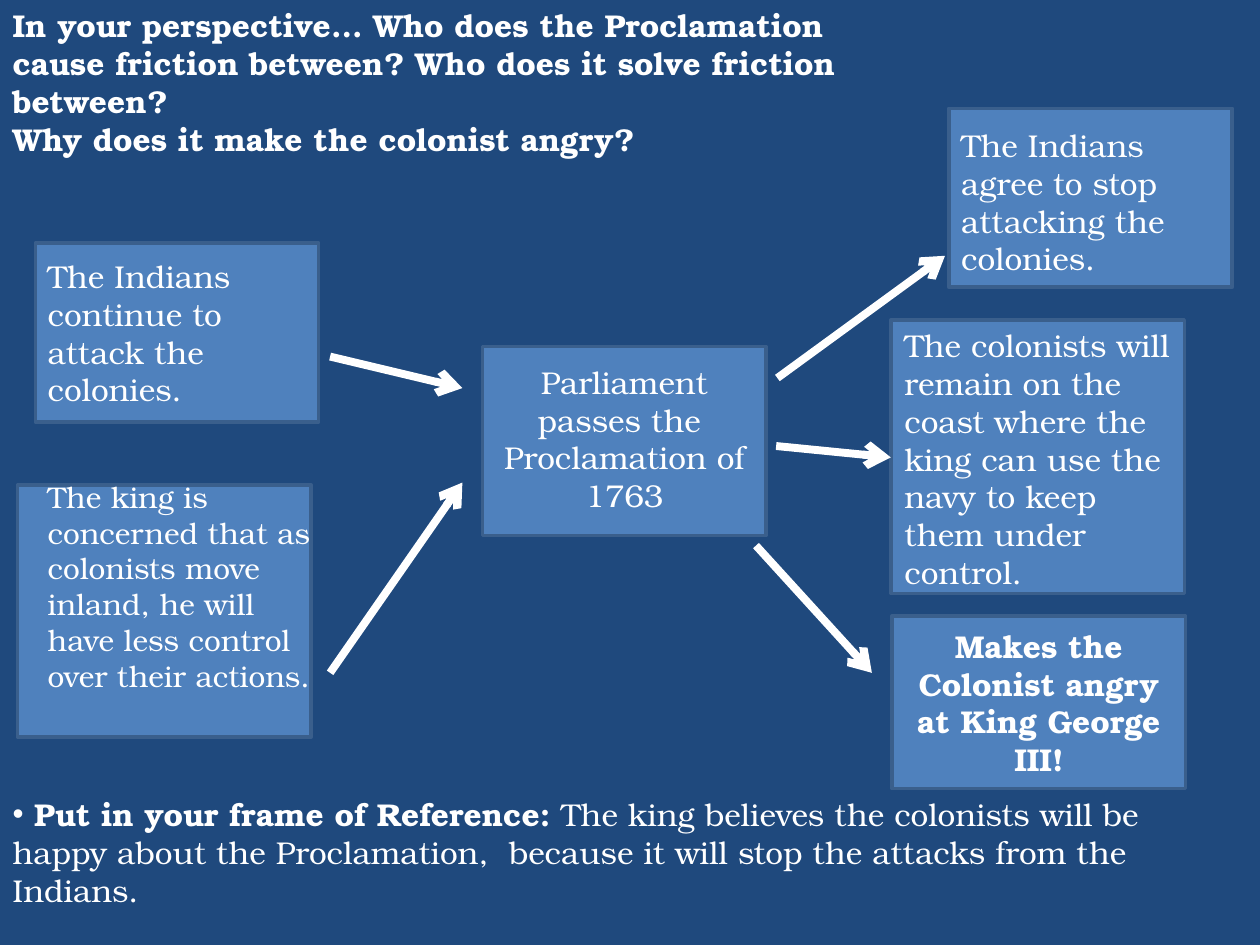
from lxml.etree import SubElement
from pptx import Presentation
from pptx.dml.color import RGBColor
from pptx.enum.shapes import MSO_CONNECTOR, MSO_SHAPE
from pptx.enum.text import MSO_ANCHOR, MSO_AUTO_SIZE, PP_ALIGN
from pptx.oxml.ns import qn
from pptx.util import Inches, Pt

COLOURS = {"background": "1F497D", "box": "4F81BD", "border": "3A5F8C", "light": "FFFFFF"}
FONT = "TeX Gyre Bonum"


def colour(name):
    return RGBColor.from_string(COLOURS[name])


class CauseEffectSlide:
    def __init__(self, presentation):
        self.slide = presentation.slides.add_slide(presentation.slide_layouts[1])
        fill = self.slide.background.fill
        fill.solid()
        fill.fore_color.rgb = colour("background")

    def set_text(self, shape, lines, size=18, bold=False, align=PP_ALIGN.LEFT,
                 anchor=MSO_ANCHOR.TOP):
        frame = shape.text_frame
        frame.word_wrap = True
        frame.auto_size = MSO_AUTO_SIZE.NONE
        frame.vertical_anchor = anchor
        frame.text = "\n".join(lines)
        for paragraph in frame.paragraphs:
            paragraph.alignment = align
            paragraph.space_before = Pt(0)
            font = paragraph.font
            font.name, font.size, font.bold = FONT, Pt(size), bold
            font.color.rgb = colour("light")

    def place(self, shape, area):
        shape.left, shape.top, shape.width, shape.height = map(Inches, area)

    def title(self, area, lines):
        shape = self.slide.shapes.title
        self.place(shape, area)
        self.set_text(shape, lines, bold=True)

    def bullet(self, area, lead, text):
        """Fill the body with one bullet that has a bold lead-in."""
        shape = self.slide.placeholders[1]
        self.place(shape, area)
        self.set_text(shape, [""])
        paragraph = shape.text_frame.paragraphs[0]
        properties = paragraph._p.get_or_add_pPr()
        properties.set("marL", "0")
        properties.set("indent", "0")
        bullet = properties.makeelement(qn("a:buChar"), {"char": "•"})
        properties.insert_element_before(bullet, "a:tabLst", "a:defRPr", "a:extLst")
        lead_run = paragraph.add_run()
        lead_run.text = lead
        lead_run.font.bold = True
        paragraph.add_run().text = text

    def box(self, area):
        shape = self.slide.shapes.add_shape(MSO_SHAPE.RECTANGLE, *map(Inches, area))
        shape.shadow.inherit = False
        shape.fill.solid()
        shape.fill.fore_color.rgb = colour("box")
        shape.line.color.rgb = colour("border")
        shape.line.width = Pt(2)
        return shape

    def label(self, area, lines, **style):
        self.set_text(self.slide.shapes.add_textbox(*map(Inches, area)), lines, **style)

    def arrow(self, start, end):
        connector = self.slide.shapes.add_connector(
            MSO_CONNECTOR.STRAIGHT, *map(Inches, start + end))
        connector.line.color.rgb = colour("light")
        connector.line.width = Pt(4.5)
        SubElement(connector.line._get_or_add_ln(), qn("a:tailEnd"), type="arrow")
        SubElement(connector._element.spPr, qn("a:effectLst"))


def main():
    presentation = Presentation()
    presentation.slide_width, presentation.slide_height = Inches(10), Inches(7.5)
    page = CauseEffectSlide(presentation)

    page.title((0, 0, 7.25, 1.31), [
        "In your perspective… Who does the Proclamation cause friction between? "
        "Who does it solve friction between?",
        "Why does it make the colonist angry?"])

    centred = {"align": PP_ALIGN.CENTER}
    events = [
        ((0.28, 1.93, 2.25, 1.42), (0.28, 1.99, 2.33, 1.31),
         ["The Indians continue to attack the colonies."], {}),
        ((0.14, 3.85, 2.33, 2), (0.28, 3.75, 2.33, 1.82),
         ["The king is concerned that as colonists move inland, "
          "he will have less control over their actions."], {"size": 17}),
        ((3.83, 2.75, 2.25, 1.5), (3.83, 2.83, 2.25, 1.31),
         ["Parliament passes the ", "Proclamation of 1763"], centred),
        ((7.53, 0.86, 2.25, 1.42), (7.53, 0.95, 2.33, 1.31),
         ["The Indians agree to stop attacking the colonies."], {}),
        ((7.07, 2.54, 2.33, 2.17), (7.08, 2.54, 2.33, 2.17),
         ["The colonists will remain on the coast where the king can use "
          "the navy to keep them under control."], {}),
    ]
    for box_area, label_area, lines, style in events:
        page.box(box_area)
        page.label(label_area, lines, **style)

    page.set_text(page.box((7.08, 4.89, 2.33, 1.37)),
                  ["Makes the Colonist angry at King George III!"],
                  bold=True, anchor=MSO_ANCHOR.MIDDLE, **centred)

    for start, end in [
        ((2.62, 2.83), (3.67, 3.08)),
        ((2.62, 5.34), (3.67, 3.83)),
        ((6.17, 3), (7.5, 2.03)),
        ((6.16, 3.54), (7.07, 3.63)),
        ((6, 4.33), (6.92, 5.34)),
    ]:
        page.arrow(start, end)

    page.bullet((0, 6.26, 9.87, 1.01), " Put in your frame of Reference: ",
                "The king believes the colonists will be happy about the Proclamation,  "
                "because it will stop the attacks from the Indians.")
    presentation.save("out.pptx")


if __name__ == "__main__":
    main()
